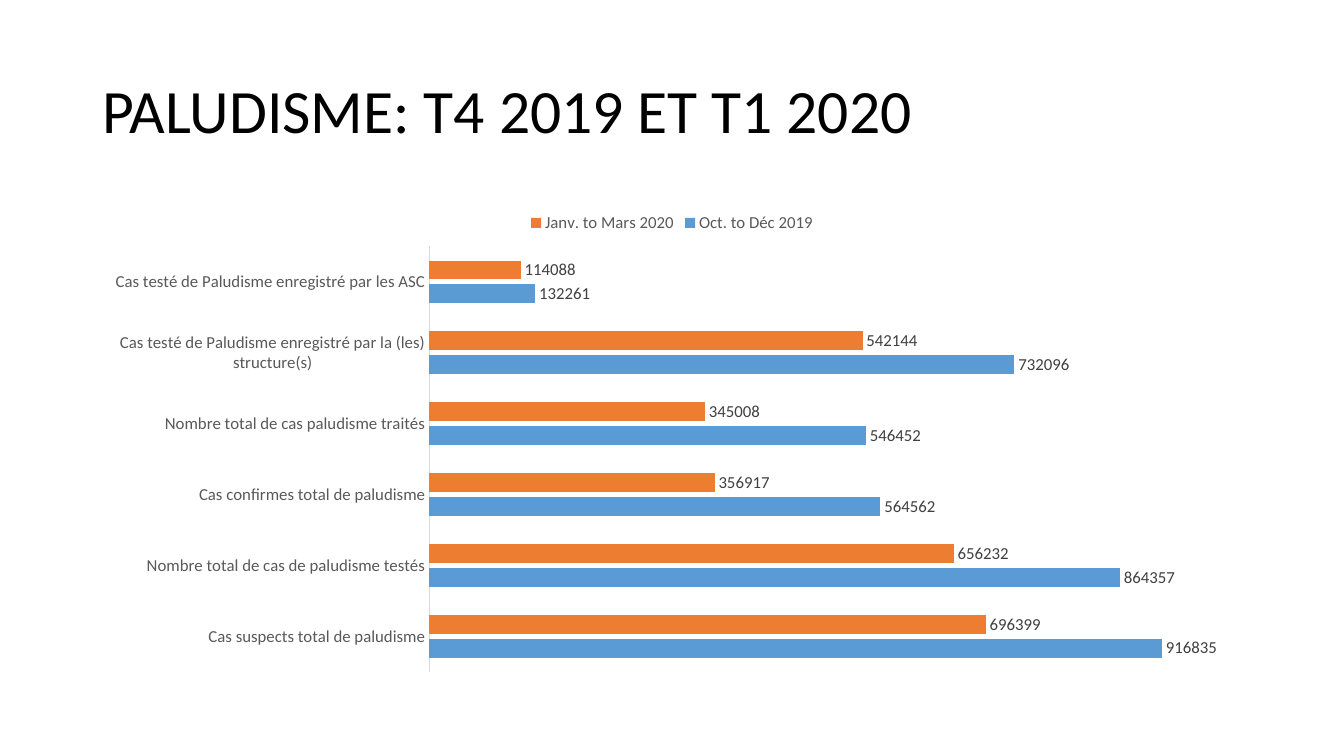
from pptx import Presentation
from pptx.chart.data import CategoryChartData
from pptx.dml.color import RGBColor
from pptx.enum.chart import XL_CHART_TYPE, XL_LABEL_POSITION, XL_LEGEND_POSITION, XL_TICK_MARK
from pptx.enum.text import MSO_ANCHOR
from pptx.util import Cm, Pt

BLACK = RGBColor(0x00, 0x00, 0x00)
DARK_GREY = RGBColor(0x40, 0x40, 0x40)
GREY = RGBColor(0x59, 0x59, 0x59)
LIGHT_GREY = RGBColor(0xD9, 0xD9, 0xD9)
BLUE = RGBColor(0x5B, 0x9B, 0xD5)
ORANGE = RGBColor(0xED, 0x7D, 0x31)
FONT = "Calibri"

HEADING = "PALUDISME: T4 2019 ET T1 2020"
INDICATORS = [
    "Cas suspects total de paludisme",
    "Nombre total de cas de paludisme testés",
    "Cas confirmes total de paludisme",
    "Nombre total de cas paludisme traités",
    "Cas testé de Paludisme enregistré par la (les) structure(s)",
    "Cas testé de Paludisme enregistré par les ASC",
]
QUARTERS = [
    ("Oct. to Déc 2019", BLUE, (916835, 864357, 564562, 546452, 732096, 132261)),
    ("Janv. to Mars 2020", ORANGE, (696399, 656232, 356917, 345008, 542144, 114088)),
]

LEFT, WIDTH = Cm(2.33), Cm(29.21)


def set_font(font, size, color):
    font.name = FONT
    font.size = Pt(size)
    font.color.rgb = color


def add_heading(slide):
    heading = slide.shapes.add_textbox(LEFT, Cm(1.01), WIDTH, Cm(3.68)).text_frame
    heading.word_wrap = True
    heading.vertical_anchor = MSO_ANCHOR.MIDDLE
    line = heading.paragraphs[0]
    line.line_spacing = 0.9
    run = line.add_run()
    run.text = HEADING
    set_font(run.font, 44, BLACK)


def add_cases(slide):
    data = CategoryChartData(number_format="General")
    data.categories = INDICATORS
    for quarter, _, counts in QUARTERS:
        data.add_series(quarter, counts)
    cases = slide.shapes.add_chart(
        XL_CHART_TYPE.BAR_CLUSTERED, LEFT, Cm(5.08), WIDTH, Cm(12.09), data
    ).chart
    set_font(cases.font, 12, BLACK)
    cases.has_title = False

    cases.has_legend = True
    cases.legend.position = XL_LEGEND_POSITION.TOP
    cases.legend.include_in_layout = False
    set_font(cases.legend.font, 12, GREY)

    indicators = cases.category_axis
    indicators.major_tick_mark = XL_TICK_MARK.NONE
    indicators.minor_tick_mark = XL_TICK_MARK.NONE
    indicators.format.line.color.rgb = LIGHT_GREY
    indicators.format.line.width = Pt(0.75)
    set_font(indicators.tick_labels.font, 12, GREY)

    counts_axis = cases.value_axis
    counts_axis.has_major_gridlines = False
    counts_axis.minimum_scale = 0
    counts_axis.visible = False

    bars = cases.plots[0]
    bars.gap_width = 150
    bars.overlap = -25
    bars.vary_by_categories = False
    for quarter, (_, color, _) in zip(bars.series, QUARTERS):
        quarter.format.fill.solid()
        quarter.format.fill.fore_color.rgb = color
        quarter.invert_if_negative = False
        labels = quarter.data_labels
        labels.show_value = True
        labels.position = XL_LABEL_POSITION.OUTSIDE_END
        set_font(labels.font, 12, DARK_GREY)


def main():
    deck = Presentation()
    deck.slide_width, deck.slide_height = Cm(33.87), Cm(19.05)
    slide = deck.slides.add_slide(deck.slide_layouts[6])
    add_heading(slide)
    add_cases(slide)
    deck.save("out.pptx")


if __name__ == "__main__":
    main()
